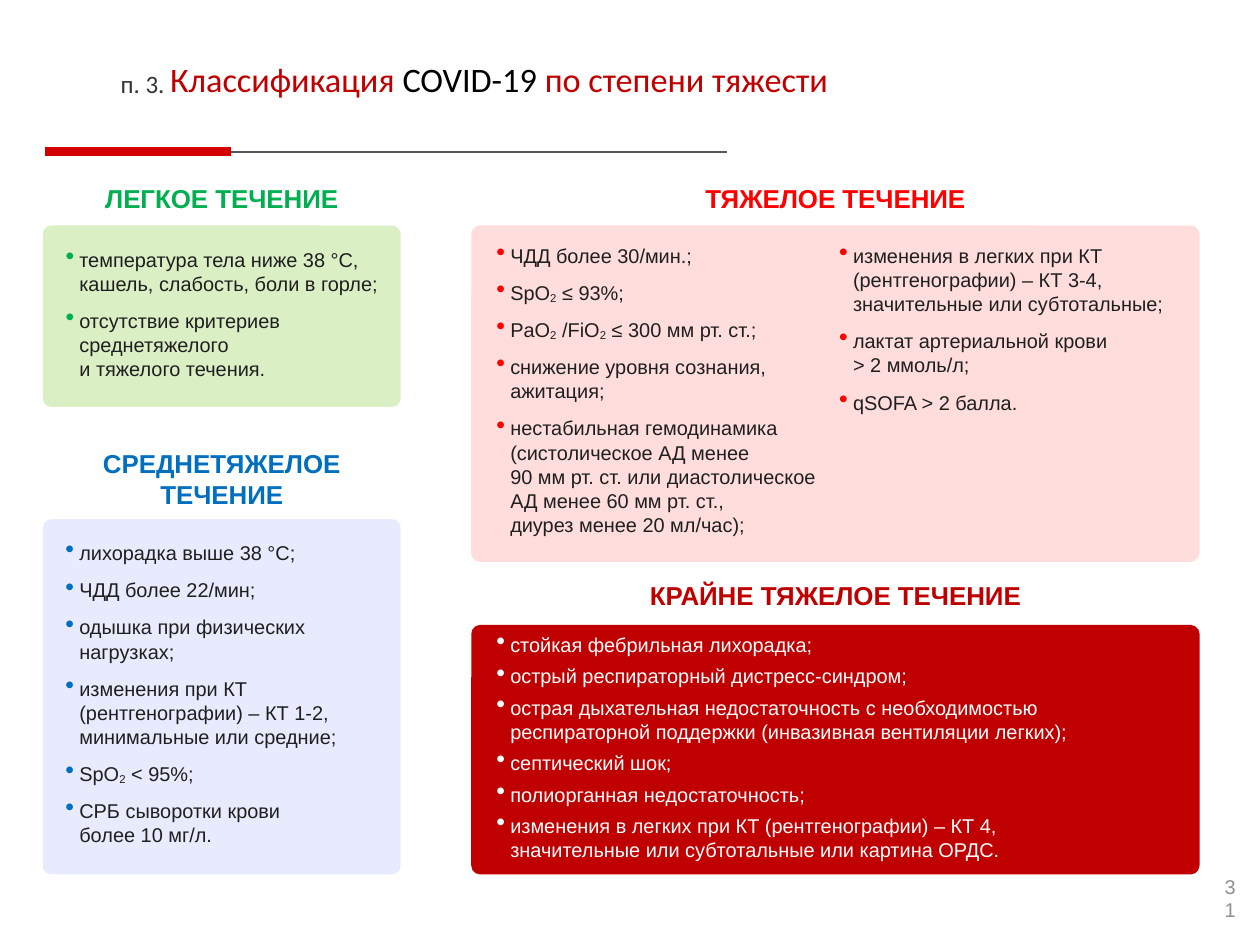
from pptx import Presentation
from pptx.dml.color import RGBColor
from pptx.enum.shapes import MSO_CONNECTOR, MSO_SHAPE
from pptx.enum.text import MSO_ANCHOR, PP_ALIGN
from pptx.oxml.ns import qn
from pptx.util import Inches, Pt
from lxml.etree import SubElement

GREEN = RGBColor(0x00, 0xAF, 0x50)
BLUE = RGBColor(0x00, 0x6F, 0xC0)
RED = RGBColor(0xFF, 0x00, 0x00)
DARK_RED = RGBColor(0xC0, 0x00, 0x00)
ACCENT_RED = RGBColor(0xD2, 0x00, 0x01)
PALE_GREEN = RGBColor(0xDB, 0xEF, 0xC5)
PALE_BLUE = RGBColor(0xE8, 0xEB, 0xFD)
PALE_RED = RGBColor(0xFF, 0xDD, 0xDD)
WHITE = RGBColor(0xFF, 0xFF, 0xFF)
BLACK = RGBColor(0x00, 0x00, 0x00)
TEXT = RGBColor(0x1F, 0x1F, 0x1F)
TITLE_GRAY = RGBColor(0x35, 0x35, 0x35)
RULE_GRAY = RGBColor(0x56, 0x56, 0x56)
NUMBER_GRAY = RGBColor(0x8F, 0x8F, 0x8F)

presentation = Presentation()
presentation.slide_width = Inches(10)
presentation.slide_height = Inches(7.5)
slide = presentation.slides.add_slide(presentation.slide_layouts[6])


def add_text_frame(left, top, width, height):
    box = slide.shapes.add_textbox(Inches(left), Inches(top), Inches(width), Inches(height))
    frame = box.text_frame
    frame.word_wrap = True
    frame.margin_left = frame.margin_right = frame.margin_top = frame.margin_bottom = 0
    return frame


def add_run(paragraph, text, size, color, font="Arial", baseline=0):
    run = paragraph.add_run()
    run.text = text
    run.font.name = font
    run.font.size = Pt(size)
    run.font.color.rgb = color
    if baseline:
        run.font._element.set("baseline", str(baseline * 1000))
    return run


# Title
title = add_text_frame(0.38, 0.43, 6.77, 0.34)
title.vertical_anchor = MSO_ANCHOR.MIDDLE
paragraph = title.paragraphs[0]
paragraph.alignment = PP_ALIGN.CENTER
add_run(paragraph, "п. 3. ", 24.6, TITLE_GRAY, "Calibri", -2)
for text, color in [("Классификация ", DARK_RED), ("COVID-19 ", BLACK),
                    ("по степени тяжести", DARK_RED)]:
    add_run(paragraph, text, 19.6, color, "Calibri")

# Rule under the title with its thick red start
for end, y, color, weight in [(5.77, 1.21, RULE_GRAY, 1.2), (1.83, 1.2, ACCENT_RED, 5.2)]:
    rule = slide.shapes.add_connector(
        MSO_CONNECTOR.STRAIGHT, Inches(0.36), Inches(y), Inches(end), Inches(y))
    rule.line.color.rgb = color
    rule.line.width = Pt(weight)
    SubElement(rule._element.spPr, qn("a:effectLst"))

# Panels: left, top, width, height, fill
panels = [
    (0.34, 1.79, 2.84, 1.44, PALE_GREEN),
    (0.34, 4.12, 2.84, 2.82, PALE_BLUE),
    (3.74, 1.79, 5.78, 2.67, PALE_RED),
    (3.74, 4.96, 5.78, 1.98, DARK_RED),
]
for left, top, width, height, fill in panels:
    panel = slide.shapes.add_shape(
        MSO_SHAPE.ROUNDED_RECTANGLE, Inches(left), Inches(top), Inches(width), Inches(height))
    panel.adjustments[0] = 0.07 / min(width, height)
    panel.shadow.inherit = False
    panel.fill.solid()
    panel.fill.fore_color.rgb = fill
    panel.line.fill.background()

# Headings: center, top, width, height, color, text
headings = [
    (1.76, 1.45, 2.4, 0.25, GREEN, "ЛЕГКОЕ ТЕЧЕНИЕ"),
    (1.76, 3.55, 2.4, 0.5, BLUE, "СРЕДНЕТЯЖЕЛОЕ\vТЕЧЕНИЕ"),
    (6.63, 1.45, 3.2, 0.25, RED, "ТЯЖЕЛОЕ ТЕЧЕНИЕ"),
    (6.63, 4.6, 3.2, 0.25, DARK_RED, "КРАЙНЕ ТЯЖЕЛОЕ ТЕЧЕНИЕ"),
]
for center, top, width, height, color, text in headings:
    frame = add_text_frame(center - width / 2, top, width, height)
    frame.text = text
    paragraph = frame.paragraphs[0]
    paragraph.alignment = PP_ALIGN.CENTER
    paragraph.font.name = "Arial"
    for run in paragraph.runs:
        run.font.name = "Arial"
        run.font.size = Pt(14.8)
        run.font.bold = True
        run.font.color.rgb = color

# Lists: left, top, width, height, bullet color, text color, gap, items
# The sign ₂ marks a lowered 2; \v marks a line break
lists = [
    (0.51, 1.96, 2.52, 1.07, GREEN, TEXT, 7.4, [
        "температура тела ниже 38 °C,\vкашель, слабость, боли в горле;",
        "отсутствие критериев\vсреднетяжелого\vи тяжелого течения."]),
    (0.51, 4.29, 2.4, 2.46, BLUE, TEXT, 7.4, [
        "лихорадка выше 38 °C;",
        "ЧДД более 22/мин;",
        "одышка при физических\vнагрузках;",
        "изменения при КТ\v(рентгенографии) – КТ 1-2,\vминимальные или средние;",
        "SpO₂ < 95%;",
        "СРБ сыворотки крови\vболее 10 мг/л."]),
    (3.93, 1.93, 2.6, 2.35, RED, TEXT, 7.4, [
        "ЧДД более 30/мин.;",
        "SpO₂ ≤ 93%;",
        "PaO₂ /FiO₂ ≤ 300 мм рт. ст.;",
        "снижение уровня сознания,\vажитация;",
        "нестабильная гемодинамика\v(систолическое АД менее\v"
        "90 мм рт. ст. или диастолическое\vАД менее 60 мм рт. ст.,\v"
        "диурез менее 20 мл/час);"]),
    (6.65, 1.93, 2.65, 1.38, RED, TEXT, 7.4, [
        "изменения в легких при КТ\v(рентгенографии) – КТ 3-4,\vзначительные или субтотальные;",
        "лактат артериальной крови\v> 2 ммоль/л;",
        "qSOFA > 2 балла."]),
    (3.93, 5.02, 4.7, 1.84, WHITE, WHITE, 4.1, [
        "стойкая фебрильная лихорадка;",
        "острый респираторный дистресс-синдром;",
        "острая дыхательная недостаточность с необходимостью\v"
        "респираторной поддержки (инвазивная вентиляции легких);",
        "септический шок;",
        "полиорганная недостаточность;",
        "изменения в легких при КТ (рентгенографии) – КТ 4,\v"
        "значительные или субтотальные или картина ОРДС."]),
]
for left, top, width, height, bullet_color, text_color, gap, items in lists:
    frame = add_text_frame(left, top, width, height)
    for index, item in enumerate(items):
        paragraph = frame.paragraphs[0] if index == 0 else frame.add_paragraph()
        paragraph.line_spacing = Pt(13.8)
        paragraph.space_before = Pt(gap if index else 0)
        properties = paragraph._p.get_or_add_pPr()
        properties.set("marL", str(Inches(0.12)))
        properties.set("indent", str(Inches(-0.11)))
        bullet = SubElement(properties, qn("a:buClr"))
        SubElement(bullet, qn("a:srgbClr"), val=str(bullet_color))
        SubElement(properties, qn("a:buSzPct"), val="130000")
        SubElement(properties, qn("a:buChar"), char="•")
        for line_index, line in enumerate(item.split("\v")):
            if line_index:
                paragraph.add_line_break()
            for part_index, part in enumerate(line.split("₂")):
                if part_index:
                    add_run(paragraph, "2", 11.3, text_color, baseline=-10)
                add_run(paragraph, part, 11.4, text_color)

# Slide number, wrapped in its narrow box
number = add_text_frame(9.7, 6.95, 0.13, 0.55)
paragraph = number.paragraphs[0]
paragraph.line_spacing = Pt(13.1)
paragraph._p.get_or_add_pPr().set("marL", str(Inches(0.02)))
add_run(paragraph, "31", 11.4, NUMBER_GRAY)

presentation.save("out.pptx")
